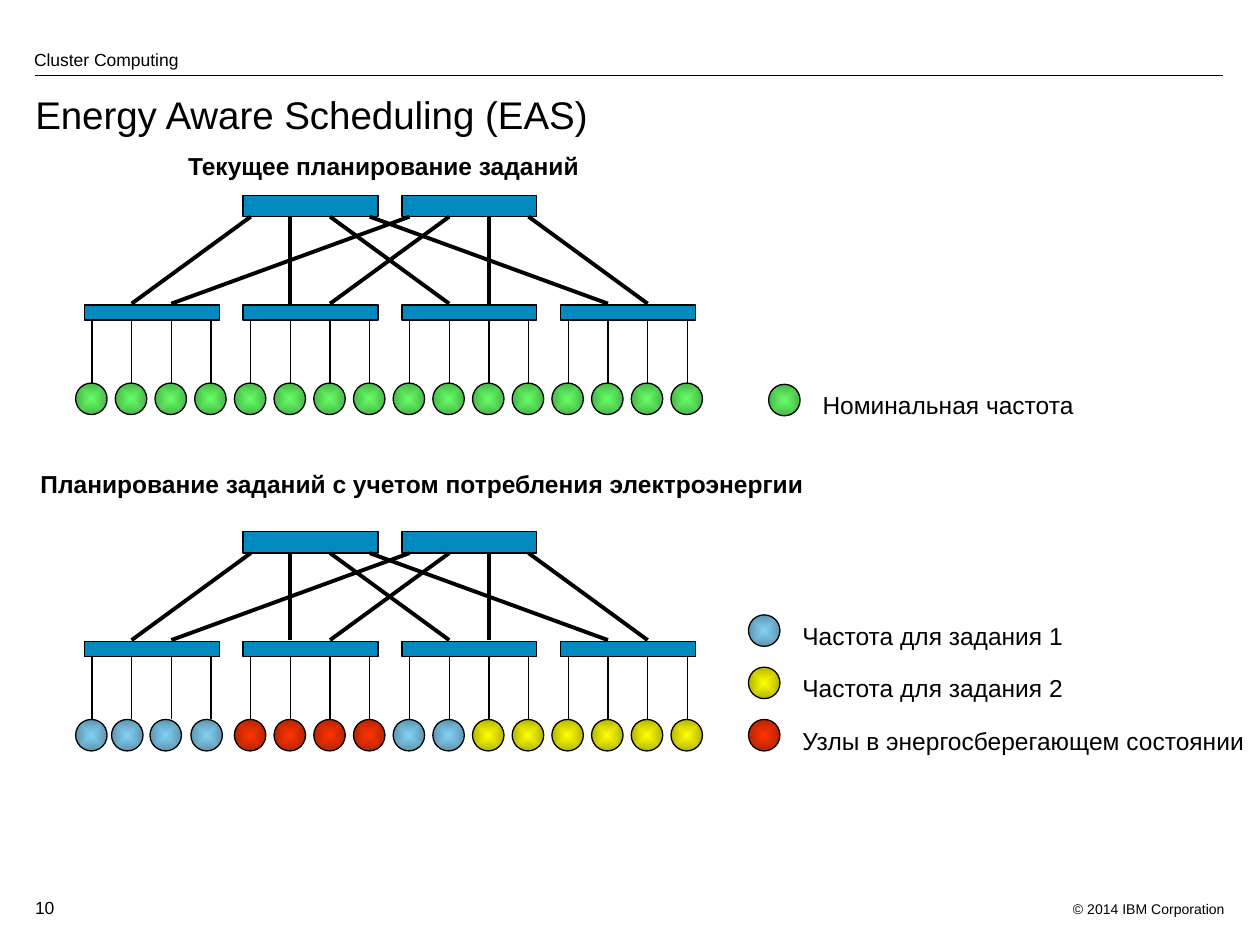
from dataclasses import dataclass

from lxml import etree
from pptx import Presentation
from pptx.dml.color import RGBColor as RGB
from pptx.enum.shapes import MSO_CONNECTOR as CONN, MSO_SHAPE as SHAPE
from pptx.enum.text import MSO_AUTO_SIZE as FIT, PP_ALIGN as ALIGN
from pptx.oxml.ns import qn
from pptx.util import Inches, Pt


@dataclass(frozen=True)
class Theme:
    font: str = "Arial"
    ink: str = "000000"
    switch: str = "008ABF"
    green: tuple = ("66FF66", "49B649")
    blue: tuple = ("83D1F5", "5E96AF")
    yellow: tuple = ("FFFF00", "B6B600")
    red: tuple = ("FF3300", "B62400")
    title: float = 22
    body: float = 14
    small: float = 10
    tiny: float = 8
    thin: float = 0.75
    thick: float = 2.25


class Board:
    def __init__(self, slide, theme):
        self.s, self.t = slide, theme

    def text(self, x, y, w, h, words, size, bold=False, align=ALIGN.LEFT,
             wrap=True, grow=True, insets=(0.1, 0.05, 0.1, 0.05)):
        tf = self.s.shapes.add_textbox(*map(Inches, (x, y, w, h))).text_frame
        tf.word_wrap = wrap
        tf.auto_size = FIT.SHAPE_TO_FIT_TEXT if grow else FIT.NONE
        (tf.margin_left, tf.margin_top,
         tf.margin_right, tf.margin_bottom) = map(Inches, insets)
        p = tf.paragraphs[0]
        p.alignment = align
        r = p.add_run()
        r.text = words
        r.font.name, r.font.size, r.font.bold = self.t.font, Pt(size), bold
        r.font.color.rgb = RGB.from_string(self.t.ink)

    def line(self, x1, y1, x2, y2, width):
        c = self.s.shapes.add_connector(
            CONN.STRAIGHT, *map(Inches, (x1, y1, x2, y2)))
        c.line.width = Pt(width)
        c.line.color.rgb = RGB.from_string(self.t.ink)
        etree.SubElement(c._element.spPr, qn("a:effectLst"))

    def shape(self, kind, x, y, w, h):
        sp = self.s.shapes.add_shape(kind, *map(Inches, (x, y, w, h)))
        sp.shadow.inherit = False
        sp.line.width = Pt(self.t.thin)
        sp.line.color.rgb = RGB.from_string(self.t.ink)
        return sp

    def switch(self, x, y, h):
        sp = self.shape(SHAPE.RECTANGLE, x, y, 1.07, h)
        sp.fill.solid()
        sp.fill.fore_color.rgb = RGB.from_string(self.t.switch)

    def node(self, x, y, colors):
        sp = self.shape(SHAPE.OVAL, x, y, 0.25, 0.25)
        sp.fill.gradient()
        for stop, position, color in zip(sp.fill.gradient_stops, (0, 1), colors):
            stop.position = position
            stop.color.rgb = RGB.from_string(color)
        # Turn the linear gradient into one that spreads from the centre
        grad = sp._element.spPr.find(qn("a:gradFill"))
        lin = grad.find(qn("a:lin"))
        path = etree.Element(qn("a:path"), path="shape")
        etree.SubElement(path, qn("a:fillToRect"),
                         {side: "50000" for side in "ltrb"})
        grad.replace(lin, path)

    def legend(self, x, y, colors, words, width):
        self.node(x, y, colors)
        self.text(x + 0.33, y, width, 0.34, words, self.t.body, wrap=False)

    def heading(self, x, y, width, words):
        self.text(x, y, width, 0.34, words, self.t.body, bold=True,
                  align=ALIGN.CENTER, wrap=False)

    def network(self, top, colors, shifts):
        """Two upper switches, four lower ones and sixteen nodes."""
        def port(i):
            return 0.73 + 0.315 * i

        for i, pair in enumerate(colors):
            self.node(port(i) - 0.13 + shifts.get(i, 0), top + 1.49, pair)
            self.line(port(i), top + 1.49, port(i), top + 0.99, self.t.thin)
        for k in range(4):
            self.switch(0.67 + 1.26 * k, top + 0.87, 0.12)
        for upper in range(2):
            self.switch(1.93 + 1.26 * upper, top, 0.17)
            for k in range(4):
                self.line(port(4 * k + 1 + upper), top + 0.86,
                          port(4 + 4 * upper + k), top + 0.17, self.t.thick)


def main():
    prs = Presentation()
    prs.slide_width, prs.slide_height = Inches(10), Inches(7.5)
    t = Theme()
    b = Board(prs.slides.add_slide(prs.slide_layouts[6]), t)

    # Header, footer and title
    b.line(0.28, 0.6, 9.71, 0.6, t.thin)
    b.text(6.48, 7.1, 3.34, 0.23, "© 2014 IBM Corporation", t.tiny,
           align=ALIGN.RIGHT)
    b.text(0.27, 0.39, 2.65, 0.2, "Cluster Computing", t.small,
           insets=(0, 0, 0, 0))
    b.text(0.18, 7.07, 0.6, 0.27, "10", t.small, grow=False)
    b.text(0.28, 0.67, 9.22, 0.88, "Energy Aware Scheduling (EAS)", t.title,
           grow=False, insets=(0, 0.05, 0.1, 0.05))

    # Current scheduling
    b.heading(1.38, 1.15, 3.33, "Текущее планирование заданий")
    b.network(1.55, [t.green] * 16, {})
    b.legend(6.1, 3.05, t.green, "Номинальная частота", 2.2)

    # Energy-aware scheduling
    b.heading(0.2, 3.67, 6.3,
              "Планирование заданий с учетом потребления электроэнергии")
    jobs = [t.blue] * 4 + [t.red] * 4 + [t.blue] * 2 + [t.yellow] * 6
    b.network(4.22, jobs, {1: -0.03, 2: -0.04, 3: -0.03})
    entries = [(t.blue, "Частота для задания 1", 2.34),
               (t.yellow, "Частота для задания 2", 2.34),
               (t.red, "Узлы в энергосберегающем состоянии", 3.73)]
    for i, entry in enumerate(entries):
        b.legend(5.94, 4.88 + 0.415 * i, *entry)

    prs.save("out.pptx")


if __name__ == "__main__":
    main()
